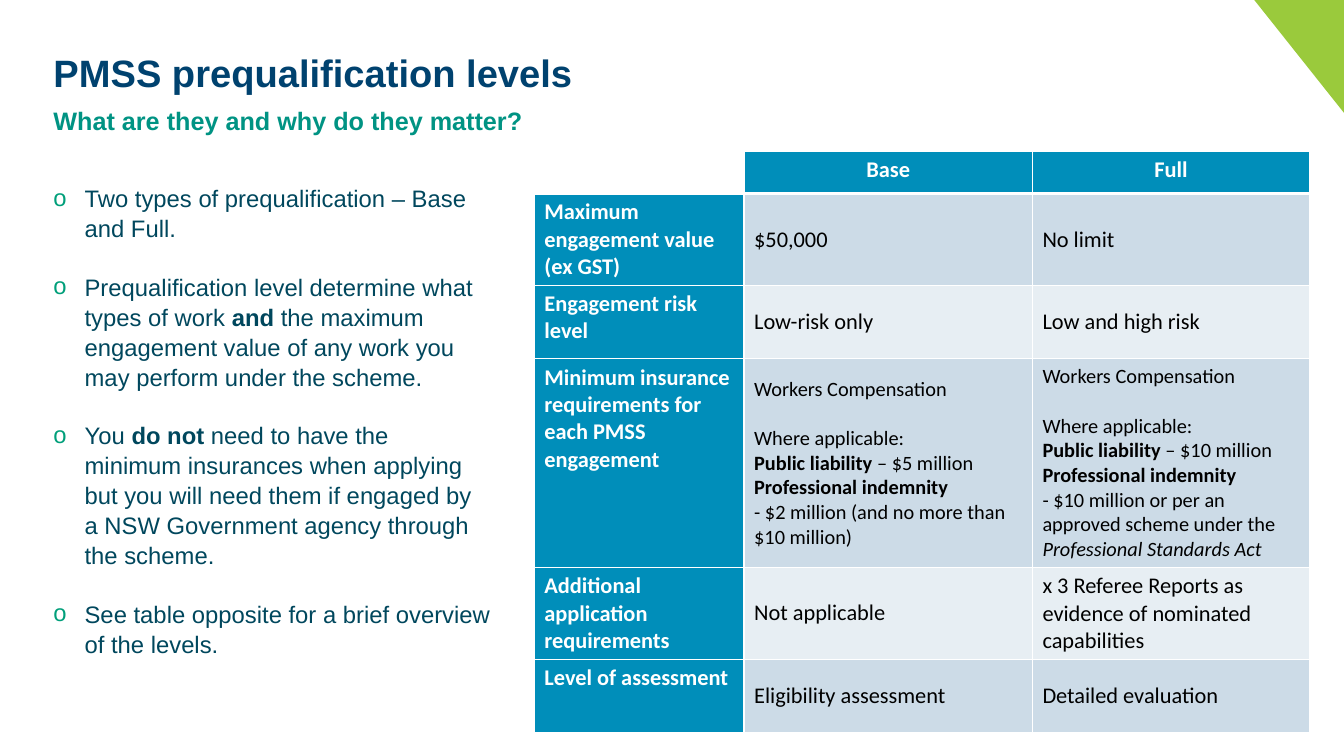
import pptx
import pptx.dml.color
import pptx.enum.text
import pptx.oxml.ns
import pptx.util
from lxml import etree

RGBColor = pptx.dml.color.RGBColor
Pt = pptx.util.Pt
ALIGN = pptx.enum.text.PP_ALIGN
ANCHOR = pptx.enum.text.MSO_ANCHOR

PX = 9144  # 100 px to the inch

WHITE = RGBColor(0xFF, 0xFF, 0xFF)
BLACK = RGBColor(0x00, 0x00, 0x00)
LIME = RGBColor(0x9A, 0xCA, 0x3C)
NAVY = RGBColor(0x00, 0x42, 0x6F)
GREEN = RGBColor(0x00, 0x93, 0x83)
BULLET_GREEN = RGBColor(0x00, 0x9F, 0x7A)
INK = RGBColor(0x00, 0x47, 0x5D)
BLUE = RGBColor(0x00, 0x8E, 0xBA)
BANDS = [RGBColor(0xCC, 0xDB, 0xE7), RGBColor(0xE7, 0xEE, 0xF3)]


def add_element(parent, tag, **attributes):
    return etree.SubElement(parent, pptx.oxml.ns.qn(tag), attributes)


def write_text(frame, text, size, color, font="Arial", bold=False, align=ALIGN.LEFT,
               gap_after=(), gap=0, line_spacing=1.0, bullet=None):
    """Write one paragraph per line; *...* marks bold, _..._ italic, \\v a line break.

    gap_after lists the paragraphs that are followed by a gap, in points.
    """
    frame.word_wrap = True
    for index, line in enumerate(text.split("\n")):
        paragraph = frame.paragraphs[0] if index == 0 else frame.add_paragraph()
        paragraph.alignment = align
        paragraph.line_spacing = line_spacing
        paragraph.space_after = Pt(gap if index in gap_after else 0)
        if bullet:
            properties = paragraph._p.get_or_add_pPr()
            properties.set("marL", str(31 * PX))
            properties.set("indent", str(-31 * PX))
            add_element(add_element(properties, "a:buClr"), "a:srgbClr", val=str(BULLET_GREEN))
            add_element(properties, "a:buFont", typeface=font)
            add_element(properties, "a:buChar", char=bullet)
        for bold_index, bold_part in enumerate(line.split("*")):
            for italic_index, italic_part in enumerate(bold_part.split("_")):
                for break_index, piece in enumerate(italic_part.split("\v")):
                    if break_index:
                        paragraph.add_line_break()
                    if not piece:
                        continue
                    run = paragraph.add_run()
                    run.text = piece
                    run.font.name = font
                    run.font.size = Pt(size)
                    run.font.color.rgb = color
                    run.font.bold = bold or bold_index % 2 == 1
                    run.font.italic = italic_index % 2 == 1


presentation = pptx.Presentation()
presentation.slide_width = 1333 * PX
presentation.slide_height = 750 * PX
slide = presentation.slides.add_slide(presentation.slide_layouts[6])

# Corner triangle
builder = slide.shapes.build_freeform(1333, 0, scale=PX)
builder.add_line_segments([(1244, 0), (1333, 112)], close=True)
corner = builder.convert_to_shape()
corner.shadow.inherit = False
corner.fill.solid()
corner.fill.fore_color.rgb = LIME
corner.line.fill.background()

# Headings and bullet list
BULLETS = """Two types of prequalification – Base and Full.
Prequalification level determine what types of work *and* the maximum engagement value of any work you may perform under the scheme.
You *do not* need to have the minimum insurances when applying but you will need them if engaged by a NSW Government agency through the scheme.
See table opposite for a brief overview of the levels."""

text_boxes = [
    ((53, 49, 818, 70), (0, 0, 0, 0), "PMSS prequalification levels",
     dict(size=27.2, color=NAVY, bold=True)),
    ((53, 104, 1186, 30), (0, 0, 0, 0), "What are they and why do they matter?",
     dict(size=18, color=GREEN, bold=True)),
    ((53, 176, 444, 486), (0, 5, 10, 5), BULLETS,
     dict(size=17, color=INK, bullet="o", line_spacing=1.05, gap_after=(0, 1, 2), gap=20.4)),
]
for box, insets, text, style in text_boxes:
    frame = slide.shapes.add_textbox(*(value * PX for value in box)).text_frame
    (frame.margin_left, frame.margin_top,
     frame.margin_right, frame.margin_bottom) = (value * PX for value in insets)
    write_text(frame, text, **style)

# Table of levels
INSURANCE = "Workers Compensation\nWhere applicable:\n*Public liability *– "
LEVELS = [
    ("", "Base", "Full"),
    ("Maximum engagement value (ex GST)", "$50,000", "No limit"),
    ("Engagement risk level", "Low-risk only", "Low and high risk"),
    ("Minimum insurance requirements for each PMSS engagement",
     INSURANCE + "$5 million\n*Professional indemnity *\v"
     "- $2 million (and no more than $10 million)",
     INSURANCE + "$10 million\n*Professional indemnity *\v"
     "- $10 million or per an approved scheme under the _Professional Standards Act_"),
    ("Additional application requirements", "Not applicable",
     "x 3 Referee Reports as evidence of nominated capabilities"),
    ("Level of assessment", "Eligibility assessment", "Detailed evaluation"),
]
COLUMN_WIDTHS = [208, 286, 275]
ROW_HEIGHTS = [42, 91, 73, 207, 91, 73]
INSURANCE_ROW = 3

table = slide.shapes.add_table(
    len(LEVELS), len(COLUMN_WIDTHS), 530 * PX, 150 * PX,
    sum(COLUMN_WIDTHS) * PX, sum(ROW_HEIGHTS) * PX).table
table.first_row = False
table.horz_banding = False
for column, width in zip(table.columns, COLUMN_WIDTHS):
    column.width = width * PX
for row, height in zip(table.rows, ROW_HEIGHTS):
    row.height = height * PX

for row_index, row_texts in enumerate(LEVELS):
    for column_index, text in enumerate(row_texts):
        cell = table.cell(row_index, column_index)
        is_header = row_index == 0 or column_index == 0

        cell_properties = cell._tc.get_or_add_tcPr()
        for side in "LRTB":
            thick = (row_index, side) in [(0, "B"), (1, "T")]
            border = add_element(cell_properties, "a:ln" + side, w=str(Pt(3 if thick else 1)))
            add_element(add_element(border, "a:solidFill"), "a:srgbClr", val=str(WHITE))

        cell.fill.solid()
        if not text:
            cell.fill.fore_color.rgb = WHITE
            continue
        cell.fill.fore_color.rgb = BLUE if is_header else BANDS[(row_index - 1) % 2]
        cell.vertical_anchor = ANCHOR.TOP if is_header else ANCHOR.MIDDLE
        small = row_index == INSURANCE_ROW and not is_header
        write_text(cell.text_frame, text, font="Calibri", size=14.5 if small else 16,
                   color=WHITE if is_header else BLACK, bold=is_header,
                   align=ALIGN.CENTER if row_index == 0 else ALIGN.LEFT,
                   gap_after=(0,) if small else (), gap=17.7)

presentation.save("out.pptx")
